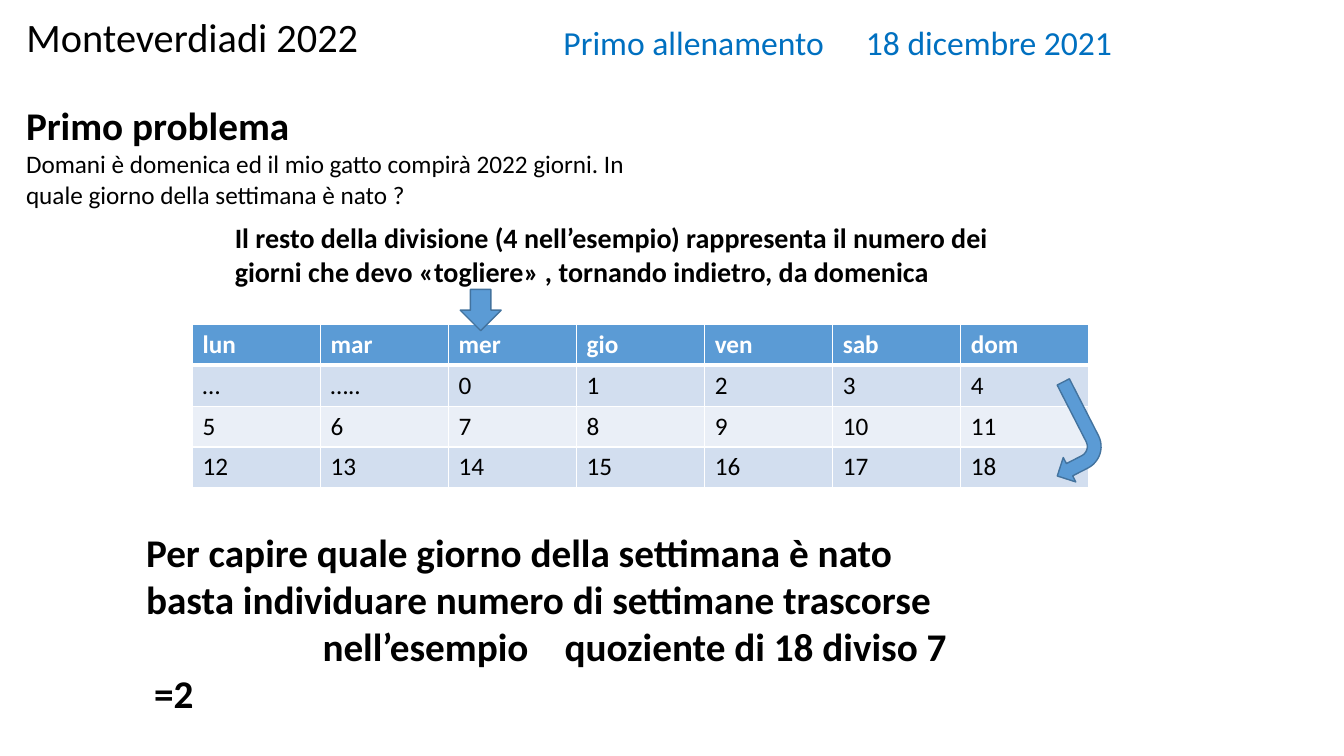
import pptx
import pptx.dml.color
import pptx.enum.shapes
import pptx.enum.text
import pptx.oxml.ns
import pptx.util
from lxml import etree

SLIDE_WIDTH, SLIDE_HEIGHT = 13.33, 7.5
BLACK, WHITE, BLUE, OUTLINE = "000000", "FFFFFF", "5B9BD5", "43739E"
DATE_BLUE = "0070C0"
BANDS = ["D2DEEF", "EAEFF7"]
WEEK = [
    ["lun", "mar", "mer", "gio", "ven", "sab", "dom"],
    ["…", "…..", *range(5)],
    list(range(5, 12)),
    list(range(12, 19)),
]
ALIGN = pptx.enum.text.PP_ALIGN
ANCHOR = pptx.enum.text.MSO_ANCHOR
SHAPES = pptx.enum.shapes.MSO_SHAPE


def color(value):
    return pptx.dml.color.RGBColor.from_string(value)


def inches(value):
    return pptx.util.Inches(value)


def area(left, top, width, height):
    """Turn percentages of the slide into lengths."""
    return [inches(share * side / 100) for share, side in
            zip((left, top, width, height), (SLIDE_WIDTH, SLIDE_HEIGHT) * 2)]


def place(shape, box):
    shape.left, shape.top, shape.width, shape.height = box


def write(paragraph, text, size=18, bold=False, fill=BLACK, align=ALIGN.LEFT,
          spacing=None, before=None, tabs=()):
    paragraph.alignment = align
    if spacing:
        paragraph.line_spacing = spacing
    if before is not None:
        paragraph.space_before = pptx.util.Pt(before)
    if tabs:
        properties = paragraph._p.get_or_add_pPr()
        tab_list = etree.SubElement(properties, pptx.oxml.ns.qn("a:tabLst"))
        for position in tabs:
            etree.SubElement(tab_list, pptx.oxml.ns.qn("a:tab"),
                             pos=str(inches(position)), algn="l")
    run = paragraph.add_run()
    run.text = text
    run.font.name = "Calibri"
    run.font.size = pptx.util.Pt(size)
    run.font.bold = bold
    run.font.color.rgb = color(fill)


def add_text(slide, box, lines):
    """Each line is a text with its format."""
    frame = slide.shapes.add_textbox(*box).text_frame
    frame.word_wrap = True
    for index, (text, style) in enumerate(lines):
        paragraph = frame.add_paragraph() if index else frame.paragraphs[0]
        write(paragraph, text, **style)


def add_heading(slide, title_box, date_box):
    title, subtitle = slide.shapes.title, slide.placeholders[1]
    place(title, title_box)
    title.text_frame.vertical_anchor = ANCHOR.BOTTOM
    write(title.text_frame.paragraphs[0], "Monteverdiadi 2022", size=28.8,
          align=ALIGN.CENTER, spacing=0.9)

    place(subtitle, date_box)
    subtitle.text_frame.vertical_anchor = ANCHOR.TOP
    subtitle.text_frame.margin_left = inches(0.63)
    write(subtitle.text_frame.paragraphs[0],
          "Primo allenamento\t18 dicembre 2021", size=24, fill=DATE_BLUE,
          spacing=0.9, before=10, tabs=[2.89])


def add_border(cell, side, width):
    line = etree.SubElement(cell._tc.get_or_add_tcPr(),
                            pptx.oxml.ns.qn("a:" + side),
                            w=str(pptx.util.Pt(width)))
    fill = etree.SubElement(line, pptx.oxml.ns.qn("a:solidFill"))
    etree.SubElement(fill, pptx.oxml.ns.qn("a:srgbClr"), val=WHITE)


def add_arrow(slide, kind, box, rotation=0):
    arrow = slide.shapes.add_shape(kind, *box)
    arrow.rotation = rotation
    arrow.shadow.inherit = False
    arrow.fill.solid()
    arrow.fill.fore_color.rgb = color(BLUE)
    arrow.line.color.rgb = color(OUTLINE)
    arrow.line.width = pptx.util.Pt(1)


def add_calendar(slide, box):
    left, top, width, height = box
    column, row = width / len(WEEK[0]), height / len(WEEK)
    table = slide.shapes.add_table(len(WEEK), len(WEEK[0]), *box).table
    for row_index, values in enumerate(WEEK):
        header = row_index == 0
        table.rows[row_index].height = int(row)
        for column_index, value in enumerate(values):
            cell = table.cell(row_index, column_index)
            write(cell.text_frame.paragraphs[0], str(value), bold=header,
                  fill=WHITE if header else BLACK)
            for side in ("lnL", "lnR", "lnT", "lnB"):
                thick = (header and side == "lnB") or (row_index == 1 and side == "lnT")
                add_border(cell, side, 3 if thick else 1)
            cell.fill.solid()
            cell.fill.fore_color.rgb = color(
                BLUE if header else BANDS[(row_index - 1) % 2])

    # Arrows, measured in table columns and rows
    def cells(x, y, across, down):
        return [int(length) for length in
                (left + x * column, top + y * row, across * column, down * row)]

    add_arrow(slide, SHAPES.BENT_ARROW, cells(6.61, 1.51, 0.43, 2.32), 152.9)
    add_arrow(slide, SHAPES.DOWN_ARROW, cells(2.09, -0.86, 0.32, 1.01))


def main():
    presentation = pptx.Presentation()
    presentation.slide_width = inches(SLIDE_WIDTH)
    presentation.slide_height = inches(SLIDE_HEIGHT)
    slide = presentation.slides.add_slide(presentation.slide_layouts[0])

    add_heading(slide, area(-0.83, 2.8, 30.3, 6), area(37.2, 2.8, 49.35, 8.8))

    # Problem
    add_text(slide, area(1.2, 12.8, 50, 15.73), [
        ("Primo problema", dict(size=28, bold=True)),
        ("Domani è domenica ed il mio gatto compirà 2022 giorni. "
         "In quale giorno della settimana è nato ?", dict(size=18)),
    ])

    # Hint and calendar
    add_text(slide, area(16.73, 28.53, 61.95, 10.27), [
        ("Il resto della divisione (4 nell’esempio) rappresenta il numero dei "
         "giorni che devo «togliere» , tornando indietro, da domenica",
         dict(size=20, bold=True)),
    ])
    add_calendar(slide, area(14.33, 42.93, 66.69, 21.6))

    # Solution
    strong = dict(size=28, bold=True)
    add_text(slide, area(10.13, 69.2, 61.95, 20.13), [
        ("Per capire quale giorno della settimana è nato "
         "basta individuare numero di settimane trascorse", strong),
        ("\tnell’esempio\tquoziente di 18 diviso 7",
         dict(strong, tabs=[1.75, 4.15])),
        ("\t=2", dict(strong, tabs=[0.08])),
    ])

    presentation.save("out.pptx")


if __name__ == "__main__":
    main()
